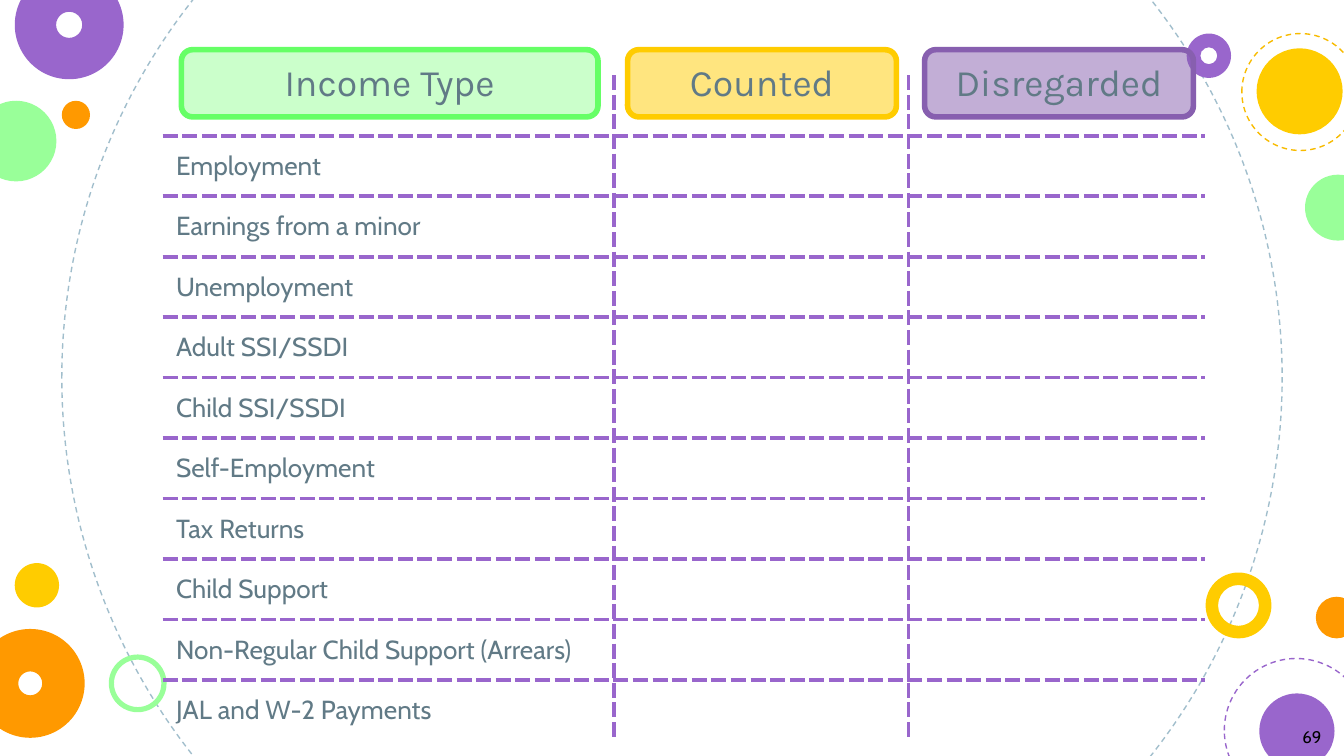
from lxml import etree
from pptx import Presentation
from pptx.dml.color import RGBColor
from pptx.enum.dml import MSO_LINE
from pptx.enum.shapes import MSO_SHAPE
from pptx.enum.text import MSO_ANCHOR, PP_ALIGN
from pptx.oxml.ns import qn
from pptx.util import Inches, Pt

DISC, RING, ROUND = MSO_SHAPE.OVAL, MSO_SHAPE.DONUT, MSO_SHAPE.ROUNDED_RECTANGLE
DASH, TOP, MIDDLE = MSO_LINE.DASH, MSO_ANCHOR.TOP, MSO_ANCHOR.MIDDLE
LEFT, MID, RIGHT = PP_ALIGN.LEFT, PP_ALIGN.CENTER, PP_ALIGN.RIGHT

WIDE = Inches(10)
HIGH = WIDE * 9 // 16
UNIT = WIDE / 100

HEX = {
    "mint": "99FF99", "green": "66FF66", "gold": "FFCC00", "amber": "F8BB00",
    "orange": "FF9900", "purple": "9966CC", "plum": "875FAF",
    "mist": "A1BECC", "slate": "617A86", "black": "000000",
}

# left, top, size, colour, hole share of a ring
DOTS = [
    (-1.8, 7.5, 6, "mint", None),
    (89.7, 42.6, 4.9, "gold", 0.19),
    (1.1, -2.2, 8.1, "purple", 0.38),
    (4.6, 7.5, 2.1, "orange", None),
    (8.1, 48.7, 4.3, "mint", 0.09),
    (97.9, 44.4, 3.1, "orange", None),
    (-1.8, 46.8, 8.1, "orange", 0.39),
    (93.7, 51.6, 5.6, "purple", None),
    (88.3, 2.5, 3.3, "purple", 0.31),
    (93.5, 3.6, 6.4, "gold", None),
    (97.1, 13, 4.9, "mint", None),
    (1.1, 41.9, 3.3, "gold", None),
]
LOOPS = [
    (4.6, -17.3, 90.8, "mist"),
    (91.1, 49, 10.7, "purple"),
    (92.4, 2.5, 8.7, "amber"),
]
HEADS = [
    ("Income Type", 13.5, 31, "mint", "green"),
    ("Counted", 46.7, 20, "gold", "gold"),
    ("Disregarded", 68.8, 20, "plum", "plum"),
]
COLS = [33.6, 21.9, 22.1]
ROW = 4.5
ITEMS = [
    "Employment", "Earnings from a minor", "Unemployment", "Adult SSI/SSDI",
    "Child SSI/SSDI", "Self-Employment", "Tax Returns", "Child Support",
    "Non-Regular Child Support (Arrears)", "JAL and W-2 Payments",
]


def tint(name):
    """Return the named colour."""
    return RGBColor.from_string(HEX[name])


def grid(*spots):
    """Turn grid units into slide lengths."""
    return [round(spot * UNIT) for spot in spots]


def write(frame, text, size=14, font="Cabin", tone="slate", align=LEFT):
    """Put one formatted line into a text frame."""
    para = frame.paragraphs[0]
    para.alignment = align
    run = para.add_run()
    run.text = text
    run.font.size = Pt(size)
    run.font.name = font
    run.font.color.rgb = tint(tone)


def shape(slide, kind, spot, fill=None, line=None, width=0.75):
    """Add a preset shape with an optional fill and outline."""
    item = slide.shapes.add_shape(kind, *grid(*spot))
    item.shadow.inherit = False
    if fill:
        item.fill.solid()
        item.fill.fore_color.rgb = tint(fill)
    else:
        item.fill.background()
    if line:
        item.line.color.rgb = tint(line)
        item.line.width = Pt(width)
    else:
        item.line.fill.background()
    return item


def dot(slide, left, top, size, tone, hole):
    """Add a filled disc, or a ring when a hole is given."""
    item = shape(slide, RING if hole else DISC, (left, top, size, size), fill=tone)
    if hole:
        item.adjustments[0] = hole


def loop(slide, left, top, size, tone):
    """Add a dashed circle."""
    item = shape(slide, DISC, (left, top, size, size), line=tone)
    item.line.dash_style = DASH


def head(slide, text, left, wide, fill, line):
    """Add a half-clear column heading."""
    item = shape(slide, ROUND, (left, 3.7, wide, 5), fill, line, 3)
    tone = item.fill._xPr.find(qn("a:solidFill"))[0]
    etree.SubElement(tone, qn("a:alpha"), val="50000")
    item.text_frame.vertical_anchor = TOP
    write(item.text_frame, text, size=20, font="Karla", align=MID)


def edge(cell, side, shown):
    """Draw one side of a cell dashed, or leave it clear."""
    line = etree.SubElement(cell._tc.get_or_add_tcPr(), qn(f"a:ln{side}"), w=str(Pt(2.25)))
    if shown:
        fill = etree.SubElement(line, qn("a:solidFill"))
        etree.SubElement(fill, qn("a:srgbClr"), val=HEX["purple"])
        etree.SubElement(line, qn("a:prstDash"), val="sysDash")
    else:
        etree.SubElement(line, qn("a:noFill"))


def table(slide):
    """Add the income table with inner rules only."""
    rows, cols = len(ITEMS) + 1, len(COLS)
    spot = grid(12.1, 5.6, sum(COLS), ROW * rows)
    sheet = slide.shapes.add_table(rows, cols, *spot).table
    sheet.first_row = sheet.horz_banding = False
    for col, wide in zip(sheet.columns, grid(*COLS)):
        col.width = wide
    for r in range(rows):
        for c in range(cols):
            cell = sheet.cell(r, c)
            edge(cell, "L", c > 0)
            edge(cell, "R", c < cols - 1)
            edge(cell, "T", r > 0)
            edge(cell, "B", r < rows - 1)
            cell.fill.background()
            cell.vertical_anchor = MIDDLE
    for r, text in enumerate(ITEMS, 1):
        write(sheet.cell(r, 0).text_frame, text)


def folio(slide, text):
    """Add the page number."""
    frame = slide.shapes.add_textbox(*grid(94.7, 53.3, 4.6, 3)).text_frame
    frame.word_wrap = True
    frame.vertical_anchor = MIDDLE
    write(frame, text, size=9, tone="black", align=RIGHT)


def main():
    """Build and save the slide."""
    deck = Presentation()
    deck.slide_width, deck.slide_height = WIDE, HIGH
    slide = deck.slides.add_slide(deck.slide_layouts[6])
    for ring in LOOPS:
        loop(slide, *ring)
    for spot in DOTS:
        dot(slide, *spot)
    table(slide)
    for label in HEADS:
        head(slide, *label)
    folio(slide, "69")
    deck.save("out.pptx")


if __name__ == "__main__":
    main()
